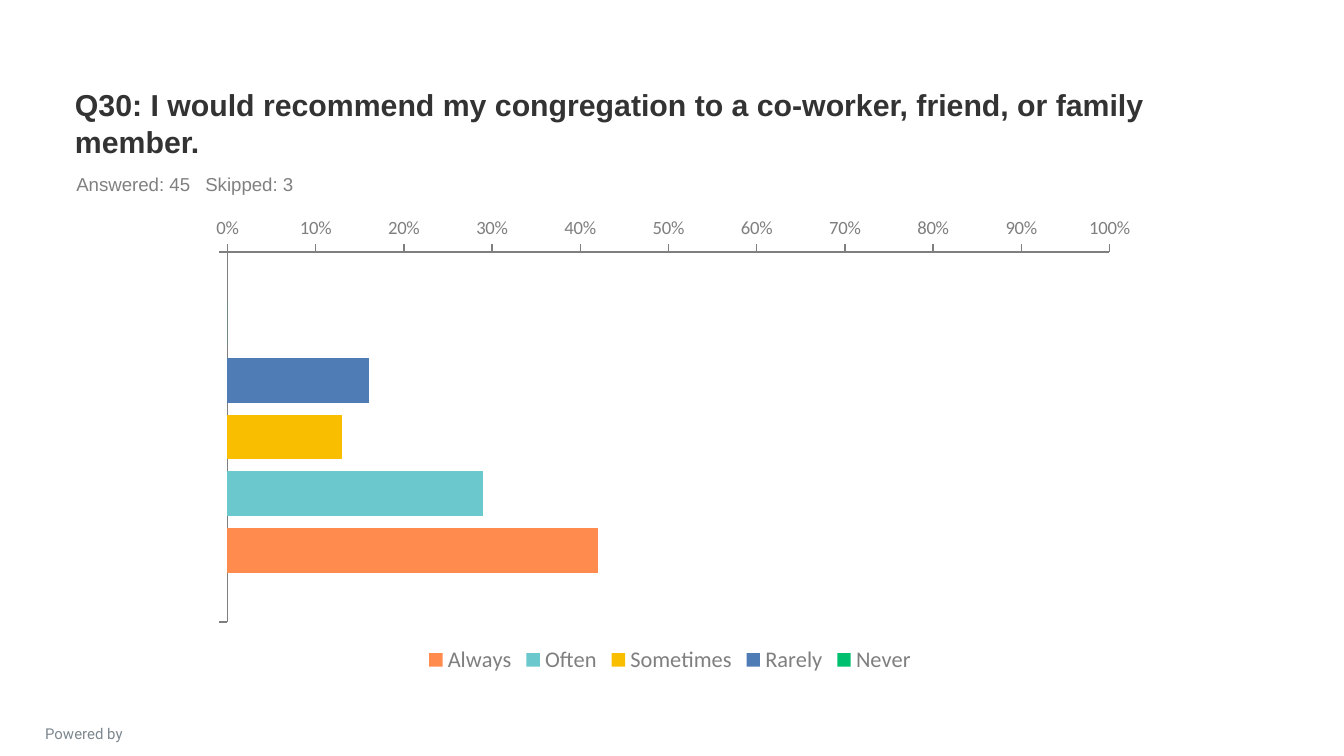
import pptx
import pptx.chart.data
import pptx.dml.color
import pptx.enum.chart
import pptx.enum.text
import pptx.oxml
import pptx.oxml.ns
import pptx.util
from pptx.util import Inches

GREY = "7F7F7F"
ANSWERS = [
    ("Never", 0, "00BF6F"),
    ("Rarely", 0.16, "507CB6"),
    ("Sometimes", 0.13, "F9BE00"),
    ("Often", 0.29, "6BC8CD"),
    ("Always", 0.42, "FF8B4F"),
]


def color(value):
    return pptx.dml.color.RGBColor.from_string(value)


def style_font(font, name, size, hex_color, bold=False):
    font.name = name
    font.size = pptx.util.Pt(size)
    font.bold = bold
    font.color.rgb = color(hex_color)


def add_text(page, bounds, text, name, size, hex_color, bold=False):
    box = page.shapes.add_textbox(*map(Inches, bounds))
    box.text_frame.word_wrap = True
    para = box.text_frame.paragraphs[0]
    para.text = text
    style_font(para.font, name, size, hex_color, bold)
    return box


def add_tab_stop(para, position):
    tabs = pptx.oxml.parse_xml(
        f'<a:tabLst {pptx.oxml.ns.nsdecls("a")}>'
        f'<a:tab pos="{position}" algn="l"/></a:tabLst>'
    )
    properties = para._p.get_or_add_pPr()
    properties.insert(0, tabs)


def style_axis(axis):
    axis.has_major_gridlines = False
    axis.major_tick_mark = pptx.enum.chart.XL_TICK_MARK.OUTSIDE
    axis.minor_tick_mark = pptx.enum.chart.XL_TICK_MARK.NONE
    axis.format.line.color.rgb = color(GREY)
    axis.format.line.width = pptx.util.Pt(0.75)
    style_font(axis.tick_labels.font, "Calibri", 10, GREY)


def add_answer_chart(page, bounds):
    data = pptx.chart.data.CategoryChartData(number_format="0%")
    data.categories = [" "]
    for name, share, _ in ANSWERS:
        data.add_series(name, [share])
    chart = page.shapes.add_chart(
        pptx.enum.chart.XL_CHART_TYPE.BAR_CLUSTERED, *map(Inches, bounds), data
    ).chart
    chart.has_title = False
    style_font(chart.font, "Calibri", 18, "333333")

    # Bars
    plot = chart.plots[0]
    plot.vary_by_categories = False
    plot.gap_width = 219
    plot.overlap = -27
    for series, (_, _, fill) in zip(plot.series, ANSWERS):
        series.invert_if_negative = False
        series.format.fill.solid()
        series.format.fill.fore_color.rgb = color(fill)

    # Axes: reversed categories, with the percent scale after the last one
    categories, values = chart.category_axis, chart.value_axis
    style_axis(categories)
    style_axis(values)
    categories.reverse_order = True
    categories.crosses_at = 2
    categories.tick_label_position = pptx.enum.chart.XL_TICK_LABEL_POSITION.LOW
    values.minimum_scale = 0
    values.maximum_scale = 1
    values.major_unit = 0.1
    values.tick_labels.number_format = "0%"
    values.tick_labels.number_format_is_linked = False

    # Legend
    chart.has_legend = True
    chart.legend.position = pptx.enum.chart.XL_LEGEND_POSITION.BOTTOM
    chart.legend.include_in_layout = False
    style_font(chart.legend.font, "Calibri", 12, GREY)


def main():
    deck = pptx.Presentation()
    deck.slide_width = Inches(10)
    deck.slide_height = deck.slide_width * 9 // 16
    page = deck.slides.add_slide(deck.slide_layouts[6])

    # Footer
    footer = add_text(page, (0.05, 5.34, 1.15, 0.18), "Powered by",
                      "Roboto", 8, "7C878E")
    footer.text_frame.paragraphs[0].alignment = pptx.enum.text.PP_ALIGN.CENTER

    # Question
    title = add_text(
        page, (0.46, 0.64, 9, 0.6),
        "Q30: I would recommend my congregation to a co-worker, friend, "
        "or family member.",
        "Arial", 16.2, "333333", bold=True)
    title.text_frame.vertical_anchor = pptx.enum.text.MSO_ANCHOR.BOTTOM
    title.text_frame.paragraphs[0].line_spacing = 1.03

    # Response counts
    counts = add_text(page, (0.47, 1.24, 9, 0.26), "Answered: 45\tSkipped: 3",
                      "Arial", 10, "808080")
    add_tab_stop(counts.text_frame.paragraphs[0], Inches(0.96))

    # Answers
    add_answer_chart(page, (1.42, 1.55, 7.13, 3.5))

    deck.save("out.pptx")


if __name__ == "__main__":
    main()
